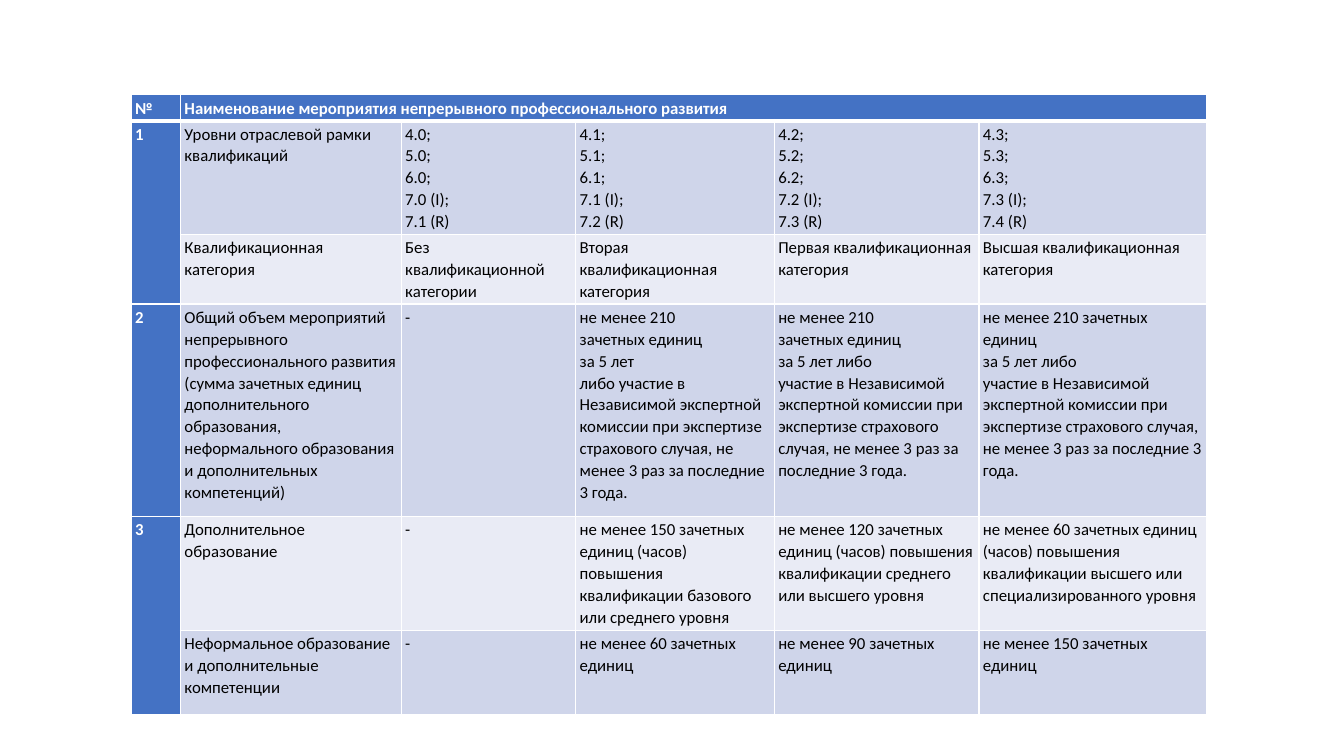
from pptx import Presentation
from pptx import util as u
from pptx.dml.color import RGBColor
from pptx.oxml import parse_xml
from pptx.oxml.ns import nsdecls

WHITE = RGBColor(0xFF, 0xFF, 0xFF)
BLACK = RGBColor(0, 0, 0)
BLUE = RGBColor(0x44, 0x72, 0xC4)
BAND_DARK = RGBColor(0xCF, 0xD5, 0xEA)
BAND_LIGHT = RGBColor(0xE9, 0xEB, 0xF5)

COLUMN_WIDTHS = [0.49, 2.19, 1.73, 1.97, 2.03, 2.26]
ROW_HEIGHTS = [0.25, 1.03, 0.64, 2.11, 1.13, 0.83]
# First and last (row, column) of each merged area
MERGES = [((0, 1), (0, 5)), ((1, 0), (2, 0)), ((4, 0), (5, 0))]

COMMISSION = ("участие в Независимой экспертной комиссии при экспертизе "
              "страхового случая, не менее 3 раз за последние 3 года.")


def levels(step):
    """Qualification framework levels for a category, one a line."""
    return f"4.{step};\n5.{step};\n6.{step};\n7.{step} (I);\n7.{step + 1} (R)"


def training(hours, grade):
    return f"не менее {hours} зачетных единиц (часов) повышения квалификации {grade} уровня"


ROWS = [
    ["№", "Наименование мероприятия непрерывного профессионального развития",
     "", "", "", ""],
    ["1", "Уровни отраслевой рамки квалификаций"] + [levels(step) for step in range(4)],
    ["", "Квалификационная категория", "Без квалификационной категории"]
    + [f"{rank} квалификационная категория" for rank in ("Вторая", "Первая", "Высшая")],
    ["2", "Общий объем мероприятий непрерывного профессионального развития "
     "(сумма зачетных единиц дополнительного образования, неформального "
     "образования и дополнительных компетенций)", "-",
     "не менее 210\nзачетных единиц\nза 5 лет\nлибо " + COMMISSION,
     "не менее 210\nзачетных единиц\nза 5 лет либо\n" + COMMISSION,
     "не менее 210 зачетных единиц\nза 5 лет либо\n" + COMMISSION],
    ["3", "Дополнительное образование", "-",
     training(150, "базового или среднего"),
     training(120, "среднего или высшего"),
     training(60, "высшего или специализированного")],
    ["", "Неформальное образование и дополнительные компетенции", "-"]
    + [f"не менее {units} зачетных единиц" for units in (60, 90, 150)],
]


class SlideBuilder:
    font = "Calibri"
    size = u.Pt(12)

    def __init__(self, deck):
        self.slide = deck.slides.add_slide(deck.slide_layouts[6])

    def table(self, left, top, widths, heights, rows, merges):
        frame = self.slide.shapes.add_table(
            len(heights), len(widths), u.Inches(left), u.Inches(top),
            u.Inches(sum(widths)), u.Inches(sum(heights)))
        table = frame.table
        table.first_row = table.horz_banding = False
        for column, width in zip(table.columns, widths):
            column.width = u.Inches(width)
        for row, height in zip(table.rows, heights):
            row.height = u.Inches(height)
        for r, row in enumerate(rows):
            for c, words in enumerate(row):
                heading = r == 0 or c == 0
                band = BAND_DARK if r % 2 else BAND_LIGHT
                cell = table.cell(r, c)
                self.borders(cell, bottom=3 if r == 0 else 1, top=3 if r == 1 else 1)
                cell.fill.solid()
                cell.fill.fore_color.rgb = BLUE if heading else band
                self.cell_text(cell, words, heading)
        for first, last in merges:
            table.cell(*first).merge(table.cell(*last))

    def borders(self, cell, bottom, top):
        """White cell borders; widths in points."""
        properties = cell._tc.get_or_add_tcPr()
        for side, width in (("L", 1), ("R", 1), ("T", top), ("B", bottom)):
            properties.append(parse_xml(
                f'<a:ln{side} {nsdecls("a")} w="{u.Pt(width)}"><a:solidFill>'
                f'<a:srgbClr val="{WHITE}"/></a:solidFill></a:ln{side}>'))

    def cell_text(self, cell, words, heading):
        cell.margin_left = cell.margin_right = u.Inches(0.04)
        cell.margin_top = cell.margin_bottom = u.Inches(0.02)
        para = cell.text_frame.paragraphs[0]
        para.line_spacing = 1.07
        para.space_after = u.Pt(8)
        for number, line in enumerate(words.split("\n")):
            if number:
                para.add_line_break()
            span = para.add_run()
            span.text = line
            span.font.name = self.font
            span.font.size = self.size
            span.font.bold = heading
            span.font.color.rgb = WHITE if heading else BLACK


def main():
    deck = Presentation()
    deck.slide_width, deck.slide_height = u.Inches(13.33), u.Inches(7.5)
    page = SlideBuilder(deck)
    page.table(1.3, 0.94, COLUMN_WIDTHS, ROW_HEIGHTS, ROWS, MERGES)
    deck.save("out.pptx")


if __name__ == "__main__":
    main()
